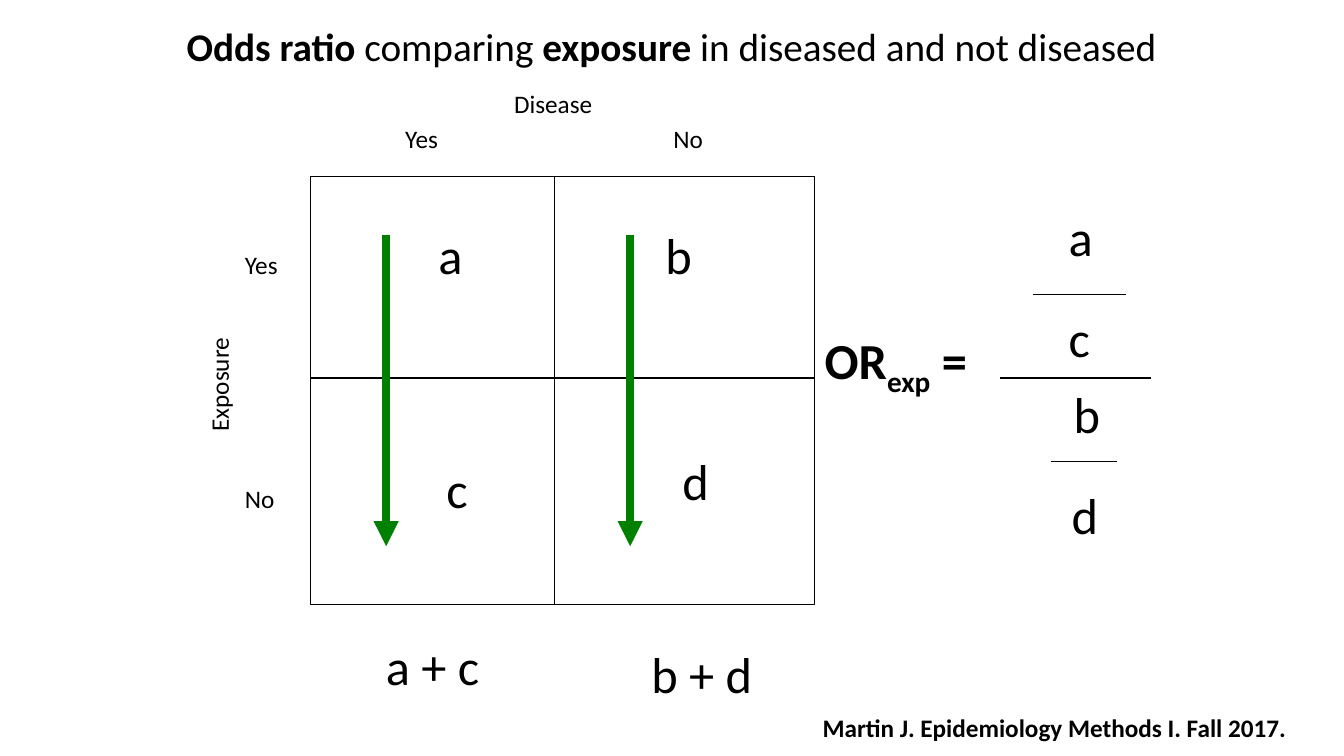
"""Build the slide on the exposure odds ratio."""
from pptx import Presentation
from pptx.dml.color import RGBColor
from pptx.enum.shapes import MSO_CONNECTOR, MSO_SHAPE
from pptx.enum.text import MSO_ANCHOR, MSO_AUTO_SIZE, PP_ALIGN
from pptx.oxml.ns import qn
from pptx.util import Inches, Pt
from lxml.etree import SubElement


def color(hex_code):
    """Turn a hex string into a colour."""
    return RGBColor.from_string(hex_code)


class OddsSlide:
    """Hold the style and the current slide."""

    FONT, INK, ARROW = "Calibri", "000000", "008000"
    LABEL, LETTER, TITLE = 18, 36, 28

    def __init__(self, deck):
        """Add a title-only slide to the deck."""
        self.slide = deck.slides.add_slide(deck.slide_layouts[5])

    def fill_text(self, holder, runs, size, wrap=False, align=PP_ALIGN.LEFT):
        """Fill a text holder with runs of (wording, bold, baseline)."""
        frame = holder.text_frame
        frame_format = {"word_wrap": wrap, "vertical_anchor": MSO_ANCHOR.TOP,
                        "auto_size": MSO_AUTO_SIZE.SHAPE_TO_FIT_TEXT}
        for name, value in frame_format.items():
            setattr(frame, name, value)
        paragraph = frame.paragraphs[0]
        paragraph.alignment = align
        for wording, bold, baseline in runs:
            run = paragraph.add_run()
            run.text = wording
            run_format = {"name": self.FONT, "size": Pt(size), "bold": bold}
            for name, value in run_format.items():
                setattr(run.font, name, value)
            run.font.color.rgb = color(self.INK)
            if baseline:
                run.font._element.set("baseline", str(baseline))

    def title(self, runs, left, top, width, height):
        """Place and fill the title."""
        heading = self.slide.shapes.title
        place = {"left": left, "top": top, "width": width, "height": height}
        for name, value in place.items():
            setattr(heading, name, Inches(value))
        self.fill_text(heading, runs, self.TITLE)

    def text(self, runs, left, top, width, height, size, rotation=0, **layout):
        """Add a text box."""
        box = self.slide.shapes.add_textbox(
            Inches(left), Inches(top), Inches(width), Inches(height))
        box.rotation = rotation
        self.fill_text(box, runs, size, **layout)

    def label(self, wording, left, top, width, rotation=0):
        """Add a small heading of the table."""
        self.text([(wording, False, 0)], left, top, width, 0.4, self.LABEL, rotation)

    def letter(self, wording, left, top, width=0.45):
        """Add a large cell letter."""
        self.text([(wording, False, 0)], left, top, width, 0.71, self.LETTER)

    def total(self, wording, left, top):
        """Add a centred column total."""
        self.text([(wording, False, 0)], left, top, 2.42, 0.7, self.LETTER,
                  wrap=True, align=PP_ALIGN.CENTER)

    def frame(self, left, top, width, height):
        """Add the outline of the two-by-two table."""
        outline = self.slide.shapes.add_shape(
            MSO_SHAPE.RECTANGLE, Inches(left), Inches(top), Inches(width), Inches(height))
        outline.shadow.inherit = False
        outline.fill.background()
        outline.line.color.rgb = color(self.INK)
        outline.line.width = Pt(0.75)

    def line(self, x1, y1, x2, y2, ink=INK, weight=0.75):
        """Add a straight rule and return it."""
        rule = self.slide.shapes.add_connector(
            MSO_CONNECTOR.STRAIGHT, Inches(x1), Inches(y1), Inches(x2), Inches(y2))
        rule.line.color.rgb = color(ink)
        rule.line.width = Pt(weight)
        SubElement(rule._element.spPr, qn("a:effectLst"))
        return rule

    def arrow(self, x, top, bottom):
        """Add a thick downward arrow."""
        shaft = self.line(x, top, x, bottom, self.ARROW, 6)
        head = SubElement(shaft.line._get_or_add_ln(), qn("a:tailEnd"))
        head.set("type", "triangle")


def main():
    """Build and save the deck."""
    deck = Presentation()
    deck.slide_width, deck.slide_height = Inches(13.33), Inches(7.5)
    odds = OddsSlide(deck)

    left, top, width, height = 3.08, 1.75, 5, 4.25
    column_split, row_split = 5.5, 3.75
    odds.frame(left, top, width, height)
    odds.title([("Odds ratio", True, 0), (" comparing ", False, 0),
                ("exposure", True, 0), (" in diseased and not diseased", False, 0)],
               1.75, 0.17, 9.89, 0.57)

    for heading in [("Disease", 5, 0.83, 0.99), ("Yes", 3.92, 1.17, 0.53),
                    ("No", 6.58, 1.17, 0.5), ("Exposure", 1.6, 3.61, 1.14, 270),
                    ("Yes", 2.33, 2.42, 0.53), ("No", 2.33, 4.75, 0.5)]:
        odds.label(*heading)

    odds.line(column_split, top, column_split, top + height)
    odds.line(left, row_split, left + width, row_split)
    for cell in [("a", 4.25, 2.17), ("b", 6.5, 2.17),
                 ("c", 4.33, 4.5), ("d", 6.67, 4.42)]:
        odds.letter(*cell)

    odds.text([("OR", True, 0), ("exp", True, -25000), (" =", True, 0)],
              8.08, 3.22, 1.68, 0.71, odds.LETTER)
    for term in [("a", 10.5, 2), ("c", 10.5, 3), ("b", 10.55, 3.75), ("d", 10.53, 4.75)]:
        odds.letter(*term)
    for start, end, y in [(10.25, 11.17, 2.92), (9.92, 11.42, row_split),
                          (10.42, 11.08, 4.58)]:
        odds.line(start, y, end, y)

    odds.total("a + c", left, 6.25)
    odds.total("b + d", 5.75, 6.33)
    for x in (3.83, 6.25):
        odds.arrow(x, 2.33, 5.42)
    odds.text([("Martin J. Epidemiology Methods I. Fall 2017.", True, 0)],
              8.06, 7.02, 5.28, 0.4, odds.LABEL, wrap=True)
    deck.save("out.pptx")


if __name__ == "__main__":
    main()
